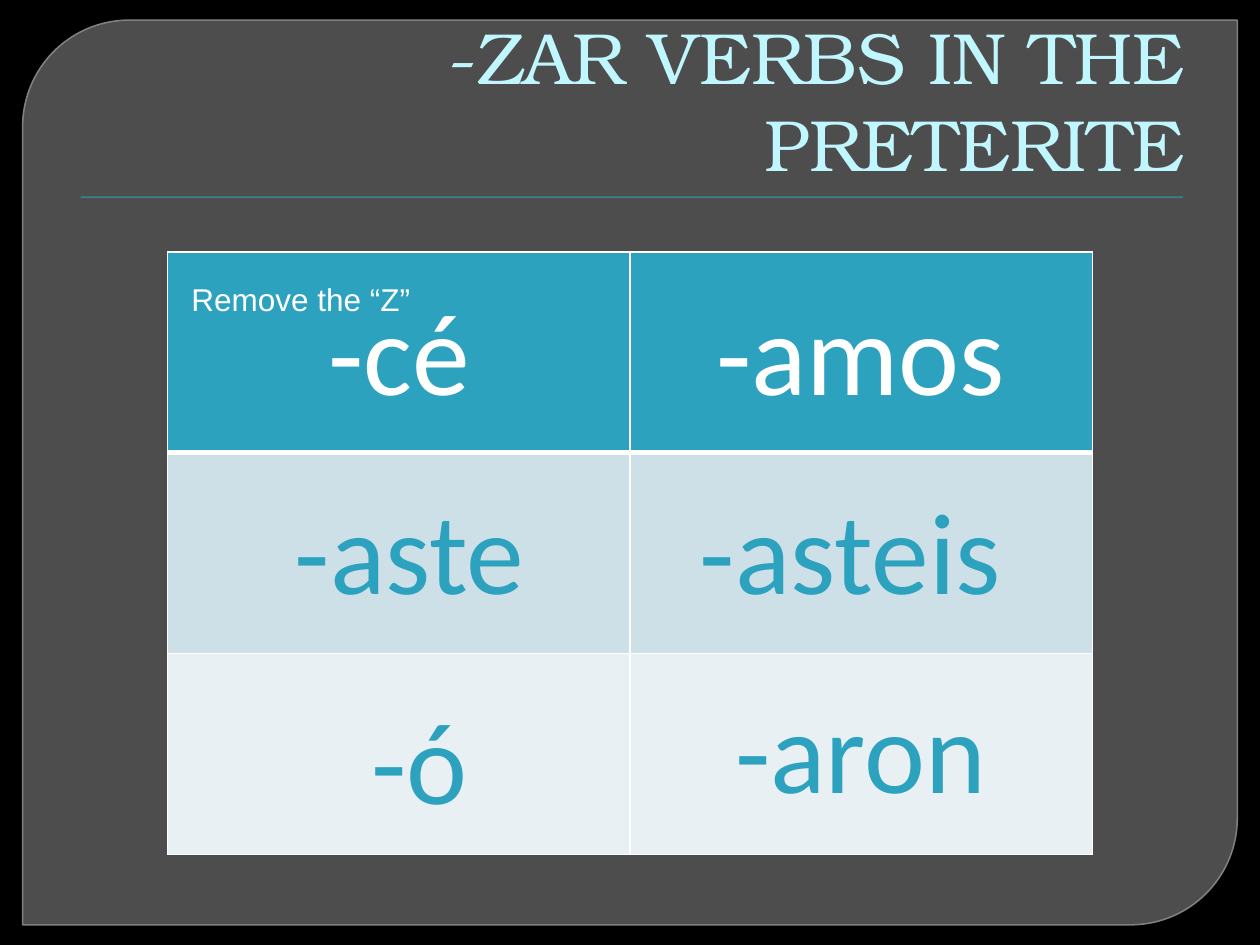
"""Build a slide showing the preterite endings of Spanish -zar verbs."""
from lxml import etree
from pptx import Presentation
from pptx.dml.color import RGBColor
from pptx.enum.shapes import MSO_SHAPE
from pptx.enum.text import MSO_ANCHOR, MSO_AUTO_SIZE, PP_ALIGN
from pptx.oxml.ns import qn
from pptx.util import Inches, Pt

PANEL, RECT = MSO_SHAPE.ROUND_2_DIAG_RECTANGLE, MSO_SHAPE.RECTANGLE
LEFT, CENTER, RIGHT = PP_ALIGN.LEFT, PP_ALIGN.CENTER, PP_ALIGN.RIGHT
BOTTOM, NO_FIT = MSO_ANCHOR.BOTTOM, MSO_AUTO_SIZE.NONE

TITLE = "-ZAR VERBS IN THE PRETERITE"
NOTE = ("Remove the “Z”", 1.42, 2.17)
ENDINGS = [
    [("-cé", 1.67, 2.17), ("-amos", 5.33, 2.17)],
    [("-aste", 1.75, 3.75), ("-asteis", 5.25, 3.75)],
    [("-ó", 1.83, 5.42), ("-aron", 5.33, 5.33)],
]
THEME = {
    "back": "000000", "panel": "4D4D4D", "edge": "808080",
    "title": "C0F7FF", "accent": "2DA2BF", "white": "FFFFFF",
    "rows": ["2DA2BF", "CDE0E8", "E8F0F4"],
    "title_font": "TeX Gyre Bonum", "ending_font": "Calibri", "note_font": "Arial",
    "title_size": 41.4, "ending_size": 66, "note_size": 18,
}


def rgb(value):
    return RGBColor.from_string(value)


def write(tf, text, *, font, size, color, align=LEFT):
    tf.word_wrap = True
    p = tf.paragraphs[0]
    p.alignment = align
    r = p.add_run()
    r.text = text
    r.font.name, r.font.size = font, Pt(size)
    r.font.color.rgb = rgb(color)


def add_text(s, text, left, top, width, height, **style):
    box = s.shapes.add_textbox(Inches(left), Inches(top), Inches(width), Inches(height))
    write(box.text_frame, text, **style)


def add_block(s, kind, left, top, width, height, fill):
    sp = s.shapes.add_shape(kind, Inches(left), Inches(top), Inches(width), Inches(height))
    sp.shadow.inherit = False
    sp.fill.solid()
    sp.fill.fore_color.rgb = rgb(fill)
    sp.line.fill.background()
    return sp


def border(cell, bottom):
    tcPr = cell._tc.get_or_add_tcPr()
    widths = {"a:lnL": 1, "a:lnR": 1, "a:lnT": 1, "a:lnB": bottom}
    for i, (tag, width) in enumerate(widths.items()):
        ln = etree.Element(qn(tag), w=str(Pt(width)))
        fill = etree.SubElement(ln, qn("a:solidFill"))
        etree.SubElement(fill, qn("a:srgbClr"), val=THEME["white"])
        tcPr.insert(i, ln)


def add_grid(s):
    rows, cols = len(ENDINGS), len(ENDINGS[0])
    table = s.shapes.add_table(rows, cols, Inches(1.33), Inches(2),
                               Inches(7.34), Inches(4.78)).table
    for i, color in enumerate(THEME["rows"]):
        for cell in table.rows[i].cells:
            cell.fill.solid()
            cell.fill.fore_color.rgb = rgb(color)
            border(cell, 3 if i == 0 else 1)


def add_title(s):
    title = s.shapes.title
    title.left, title.top = Inches(0.5), Inches(0.28)
    title.width, title.height = Inches(9), Inches(1.25)
    tf = title.text_frame
    tf.auto_size, tf.vertical_anchor = NO_FIT, BOTTOM
    write(tf, TITLE, font=THEME["title_font"], size=THEME["title_size"],
          color=THEME["title"], align=RIGHT)
    s.shapes.element.append(title.element)


def main():
    prs = Presentation()
    prs.slide_width, prs.slide_height = Inches(10), Inches(7.5)
    s = prs.slides.add_slide(prs.slide_layouts[5])
    s.background.fill.solid()
    s.background.fill.fore_color.rgb = rgb(THEME["back"])

    panel = add_block(s, PANEL, 0.18, 0.16, 9.64, 7.18, THEME["panel"])
    panel.adjustments[0], panel.adjustments[1] = 0.118, 0
    panel.line.color.rgb = rgb(THEME["edge"])
    panel.line.width = Pt(0.87)
    add_block(s, RECT, 0.64, 1.56, 8.75, 0.01, THEME["accent"])
    add_title(s)
    add_grid(s)

    for i, row in enumerate(ENDINGS):
        color = THEME["white"] if i == 0 else THEME["accent"]
        for text, left, top in row:
            add_text(s, text, left, top, 3, 1.21, font=THEME["ending_font"],
                     size=THEME["ending_size"], color=color, align=CENTER)
    add_text(s, *NOTE, 2.75, 0.4, font=THEME["note_font"],
             size=THEME["note_size"], color=THEME["white"])
    prs.save("out.pptx")


if __name__ == "__main__":
    main()
